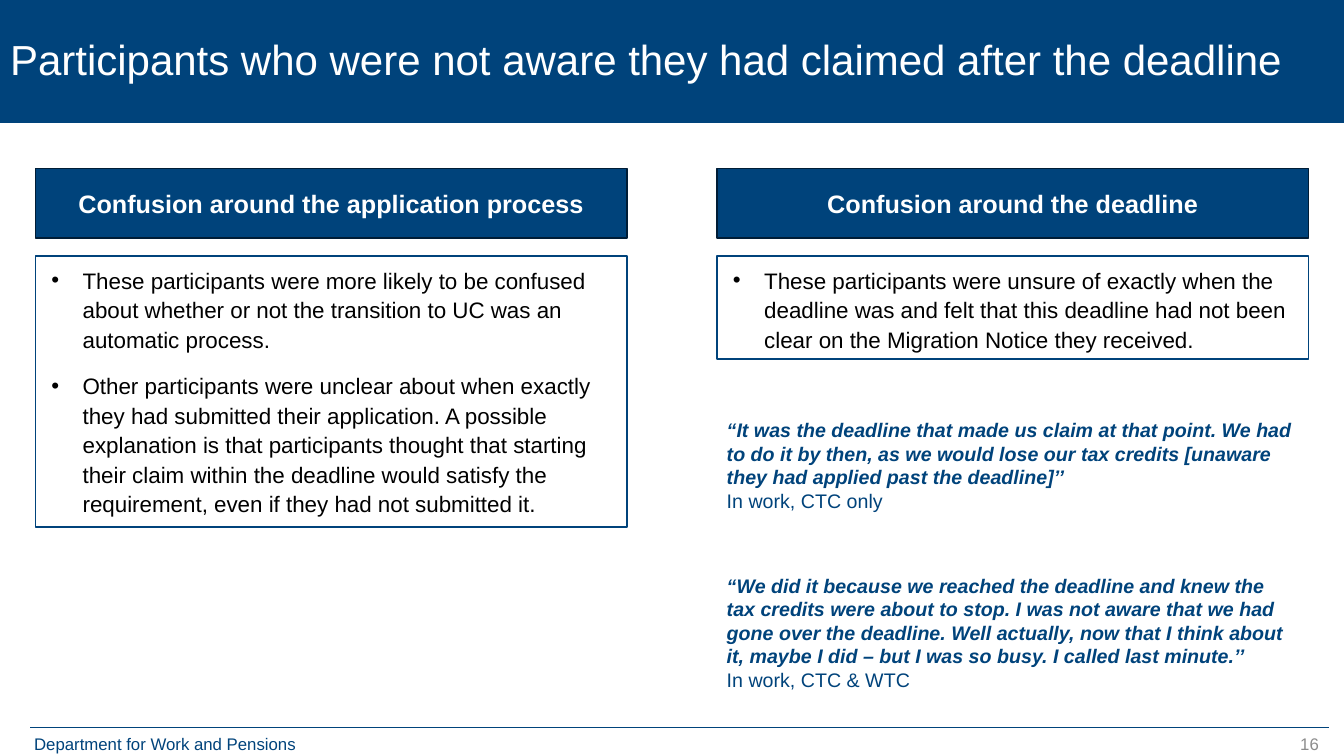
"""Build the slide on participants who were not aware they had claimed late."""
from lxml import etree
from pptx import Presentation
from pptx.dml.color import RGBColor
from pptx.enum.shapes import MSO_CONNECTOR, MSO_SHAPE
from pptx.enum.text import MSO_ANCHOR, MSO_AUTO_SIZE, PP_ALIGN
from pptx.oxml.ns import qn
from pptx.util import Inches, Pt

NAVY = RGBColor(0x00, 0x43, 0x7B)
DARK_NAVY = RGBColor(0x00, 0x1D, 0x36)
GREY = RGBColor(0x8C, 0x8C, 0x8C)
BLACK = RGBColor(0x00, 0x00, 0x00)
WHITE = RGBColor(0xFF, 0xFF, 0xFF)
RECTANGLE = MSO_SHAPE.RECTANGLE
STRAIGHT = MSO_CONNECTOR.STRAIGHT
TOP, MIDDLE = MSO_ANCHOR.TOP, MSO_ANCHOR.MIDDLE
LEFT, CENTER, RIGHT, JUSTIFY = PP_ALIGN.LEFT, PP_ALIGN.CENTER, PP_ALIGN.RIGHT, PP_ALIGN.JUSTIFY
NO_FIT = MSO_AUTO_SIZE.NONE

COLUMN_WIDTH = 5.87
COLUMNS = [
    (0.35, "Confusion around the application process", 2.69, 12, [
        "These participants were more likely to be confused about whether or not the "
        "transition to UC was an automatic process.",
        "Other participants were unclear about when exactly they had submitted their "
        "application. A possible explanation is that participants thought that starting "
        "their claim within the deadline would satisfy the requirement, even if they had "
        "not submitted it."]),
    (7.11, "Confusion around the deadline", 1.02, 24, [
        "These participants were unsure of exactly when the deadline was and felt that this "
        "deadline had not been clear on the Migration Notice they received."]),
]
QUOTES = [
    (4.1, 1.04, "“It was the deadline that made us claim at that point. We had to do it by "
     "then, as we would lose our tax credits [unaware they had applied past the deadline]’’",
     "In work, CTC only"),
    (5.64, 1.28, "“We did it because we reached the deadline and knew the tax credits were "
     "about to stop. I was not aware that we had gone over the deadline. Well actually, now "
     "that I think about it, maybe I did – but I was so busy. I called last minute.’’",
     "In work, CTC & WTC"),
]


def write(shape, texts, size, color, bold=False, italic=False, align=LEFT, anchor=TOP,
          spacing=None, before=None, bullet=False):
    frame = shape.text_frame
    frame.word_wrap = True
    frame.auto_size = NO_FIT
    frame.vertical_anchor = anchor
    for index, text in enumerate(texts):
        paragraph = frame.paragraphs[0] if index == 0 else frame.add_paragraph()
        paragraph.alignment = align
        paragraph.line_spacing = spacing
        if before is not None:
            paragraph.space_before = Pt(before)
        if bullet:
            properties = paragraph._p.get_or_add_pPr()
            properties.set("marL", str(Inches(0.31)))
            properties.set("indent", str(Inches(-0.31)))
            etree.SubElement(properties, qn("a:buFont")).set("typeface", "Arial")
            etree.SubElement(properties, qn("a:buChar")).set("char", "•")
        run = paragraph.add_run()
        run.text = text
        run.font.name = "Arial"
        run.font.size = Pt(size)
        run.font.color.rgb = color
        run.font.bold = bold
        run.font.italic = italic


def add_box(left, top, height, fill, line):
    box = slide.shapes.add_shape(RECTANGLE, Inches(left), Inches(top),
                                 Inches(COLUMN_WIDTH), Inches(height))
    box.shadow.inherit = False
    box.fill.solid()
    box.fill.fore_color.rgb = fill
    box.line.color.rgb = line
    box.line.width = Pt(1)
    return box


presentation = Presentation()
presentation.slide_width = Inches(13.33)
presentation.slide_height = Inches(7.5)
slide = presentation.slides.add_slide(presentation.slide_layouts[5])

footer = slide.shapes.add_textbox(Inches(0.24), Inches(7.23), Inches(3.23), Inches(0.3))
write(footer, ["Department for Work and Pensions"], 12, NAVY, align=JUSTIFY)

footer_line = slide.shapes.add_connector(STRAIGHT, Inches(0.3), Inches(7.22),
                                         Inches(13.18), Inches(7.22))
footer_line.line.color.rgb = NAVY
footer_line.line.width = Pt(0.5)
etree.SubElement(footer_line._element.spPr, qn("a:effectLst"))

page_number = slide.shapes.add_textbox(Inches(10.18), Inches(7.23), Inches(3), Inches(0.4))
write(page_number, ["16"], 12, GREY, align=RIGHT)

title = slide.shapes.title
title.left, title.top = Inches(0), Inches(0)
title.width, title.height = Inches(13.33), Inches(1.22)
title.fill.solid()
title.fill.fore_color.rgb = NAVY
write(title, ["Participants who were not aware they had claimed after the deadline"],
      30, WHITE, anchor=MIDDLE, spacing=0.9)

for left, heading, height, before, points in COLUMNS:
    header = add_box(left, 1.67, 0.69, NAVY, DARK_NAVY)
    write(header, [heading], 18, WHITE, bold=True, align=CENTER, anchor=MIDDLE)
    body = add_box(left, 2.54, height, WHITE, NAVY)
    frame = body.text_frame
    frame.margin_left = frame.margin_right = Inches(0.16)
    frame.margin_top = frame.margin_bottom = Inches(0.08)
    write(body, points, 16, BLACK, spacing=1.1, before=before, bullet=True)

for top, height, quote, speaker in QUOTES:
    quote_box = slide.shapes.add_textbox(Inches(7.11), Inches(top),
                                         Inches(COLUMN_WIDTH), Inches(height))
    write(quote_box, [quote, speaker], 14, NAVY)
    quote_font = quote_box.text_frame.paragraphs[0].runs[0].font
    quote_font.bold = quote_font.italic = True

presentation.save("out.pptx")
